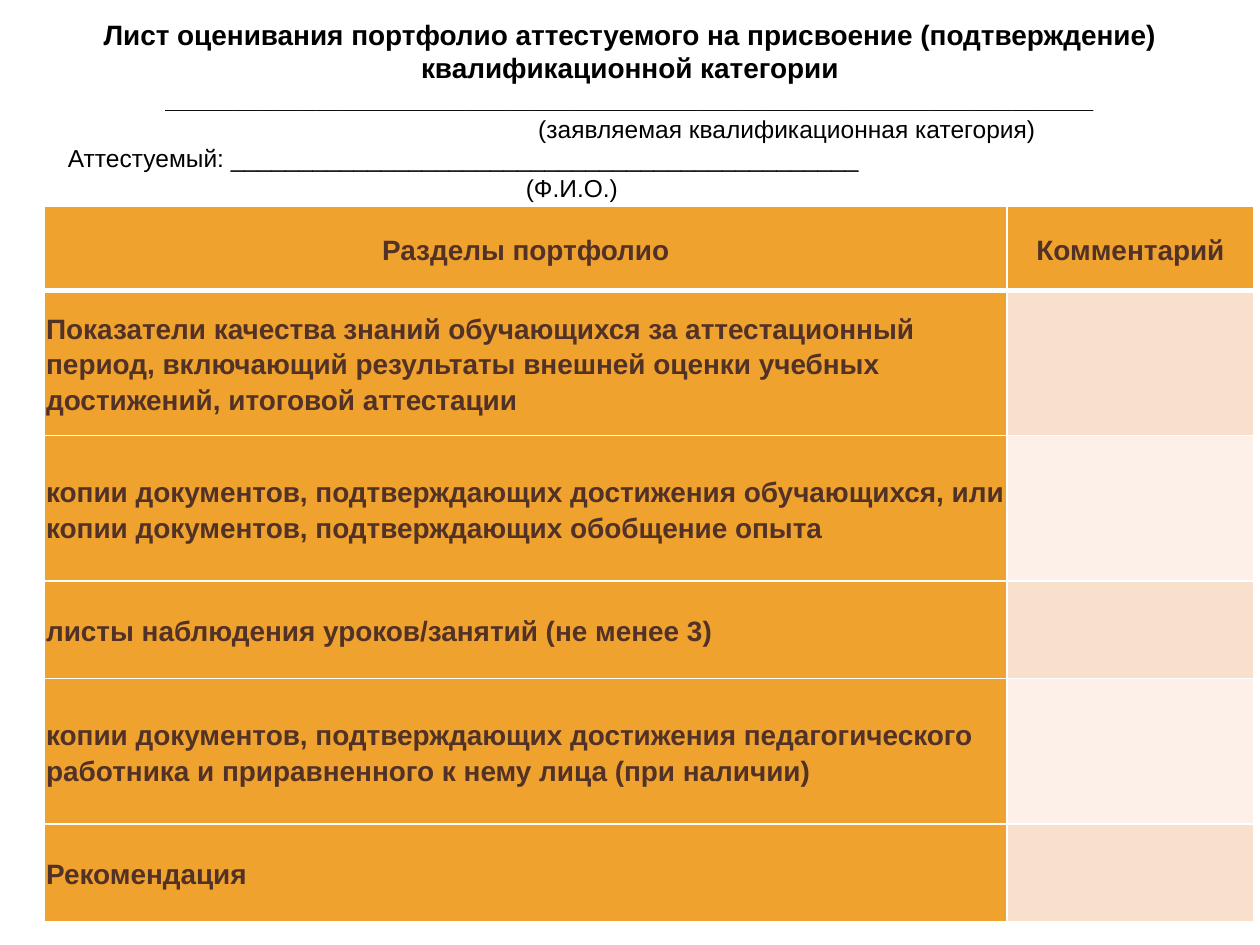
from dataclasses import dataclass

from lxml.etree import SubElement
from pptx import Presentation
from pptx.dml.color import RGBColor
from pptx.enum.text import MSO_ANCHOR, PP_ALIGN
from pptx.oxml.ns import qn
from pptx.util import Cm, Pt


@dataclass(frozen=True)
class Theme:
    font: str = "Arial"
    heading_size: int = 16
    body_size: int = 14
    text: str = "000000"
    table_text: str = "523227"
    accent: str = "F0A22E"
    bands: tuple = ("F9E0CD", "FCF0E8")
    border: str = "FFFFFF"


class SlideBuilder:
    """Draws styled elements on one slide."""

    def __init__(self, slide, theme):
        self.slide = slide
        self.theme = theme

    def style(self, paragraph, text, size, color, bold, align):
        paragraph.text = text
        paragraph.alignment = align
        paragraph.font.name = self.theme.font
        paragraph.font.size = Pt(size)
        paragraph.font.bold = bold
        paragraph.font.color.rgb = RGBColor.from_string(color)

    def form_header(self, left, top, width, height, lines):
        frame = self.slide.shapes.add_textbox(left, top, width, height).text_frame
        frame.word_wrap = True
        frame.vertical_anchor = MSO_ANCHOR.MIDDLE
        for index, (text, size, bold, align, indent) in enumerate(lines):
            paragraph = frame.add_paragraph() if index else frame.paragraphs[0]
            self.style(paragraph, text, size, self.theme.text, bold, align)
            paragraph._p.get_or_add_pPr().set("marL", str(indent))

    def border(self, cell, side, width):
        properties = cell._tc.get_or_add_tcPr()
        line = SubElement(properties, qn(f"a:ln{side}"), w=str(Pt(width)))
        fill = SubElement(line, qn("a:solidFill"))
        SubElement(fill, qn("a:srgbClr"), val=self.theme.border)

    def cell(self, cell, text, fill, align, top_width, bottom_width):
        for side, width in zip("LRTB", (1, 1, top_width, bottom_width)):
            self.border(cell, side, width)
        cell.fill.solid()
        cell.fill.fore_color.rgb = RGBColor.from_string(fill)
        cell.vertical_anchor = MSO_ANCHOR.MIDDLE
        cell.margin_left = cell.margin_right = Cm(0.03)
        cell.margin_top = cell.margin_bottom = Cm(0.03)
        if text:
            paragraph = cell.text_frame.paragraphs[0]
            self.style(paragraph, text, self.theme.heading_size, self.theme.table_text, True, align)
            paragraph.line_spacing = 1.15
            paragraph.space_after = Pt(1)

    def table(self, left, top, column_widths, row_heights, rows):
        frame = self.slide.shapes.add_table(
            len(rows), len(column_widths), left, top, sum(column_widths), sum(row_heights))
        table = frame.table
        for column, width in zip(table.columns, column_widths):
            column.width = width
        for row, height in zip(table.rows, row_heights):
            row.height = height
        for row_index, texts in enumerate(rows):
            is_header = row_index == 0
            align = PP_ALIGN.CENTER if is_header else PP_ALIGN.LEFT
            for column_index, text in enumerate(texts):
                is_accent = is_header or column_index == 0
                fill = self.theme.accent if is_accent else self.theme.bands[(row_index - 1) % 2]
                self.cell(table.cell(row_index, column_index), text, fill, align,
                          3 if row_index == 1 else 1, 3 if is_header else 1)


def main():
    presentation = Presentation()
    presentation.slide_width, presentation.slide_height = Cm(25.4), Cm(19.05)
    theme = Theme()
    builder = SlideBuilder(presentation.slides.add_slide(presentation.slide_layouts[6]), theme)

    sections = [
        "Показатели качества знаний обучающихся за аттестационный период, включающий "
        "результаты внешней оценки учебных достижений, итоговой аттестации",
        "копии документов, подтверждающих достижения обучающихся, "
        "или копии документов, подтверждающих обобщение опыта",
        "листы наблюдения уроков/занятий (не менее 3)",
        "копии документов, подтверждающих достижения педагогического "
        "работника и приравненного к нему лица (при наличии)",
        "Рекомендация",
    ]
    tall, short = Cm(2.93), Cm(1.97)
    builder.table(
        Cm(0.9), Cm(4.15), [Cm(19.4), Cm(4.98)],
        [Cm(1.7), tall, tall, short, tall, short],
        [("Разделы портфолио", "Комментарий")] + [(section, "") for section in sections])

    center, left = PP_ALIGN.CENTER, PP_ALIGN.LEFT
    builder.form_header(Cm(0.3), Cm(0.2), Cm(24.8), Cm(4.02), [
        ("Лист оценивания портфолио аттестуемого на присвоение (подтверждение) "
         "квалификационной категории", theme.heading_size, True, center, Cm(0)),
        ("_" * 68, theme.body_size, True, center, Cm(0)),
        ("(заявляемая квалификационная категория)", theme.body_size, False, center, Cm(6.33)),
        ("Аттестуемый: " + "_" * 46, theme.body_size, False, left, Cm(0.82)),
        ("(Ф.И.О.)", theme.body_size, False, left, Cm(10.05)),
    ])
    presentation.save("out.pptx")


if __name__ == "__main__":
    main()
